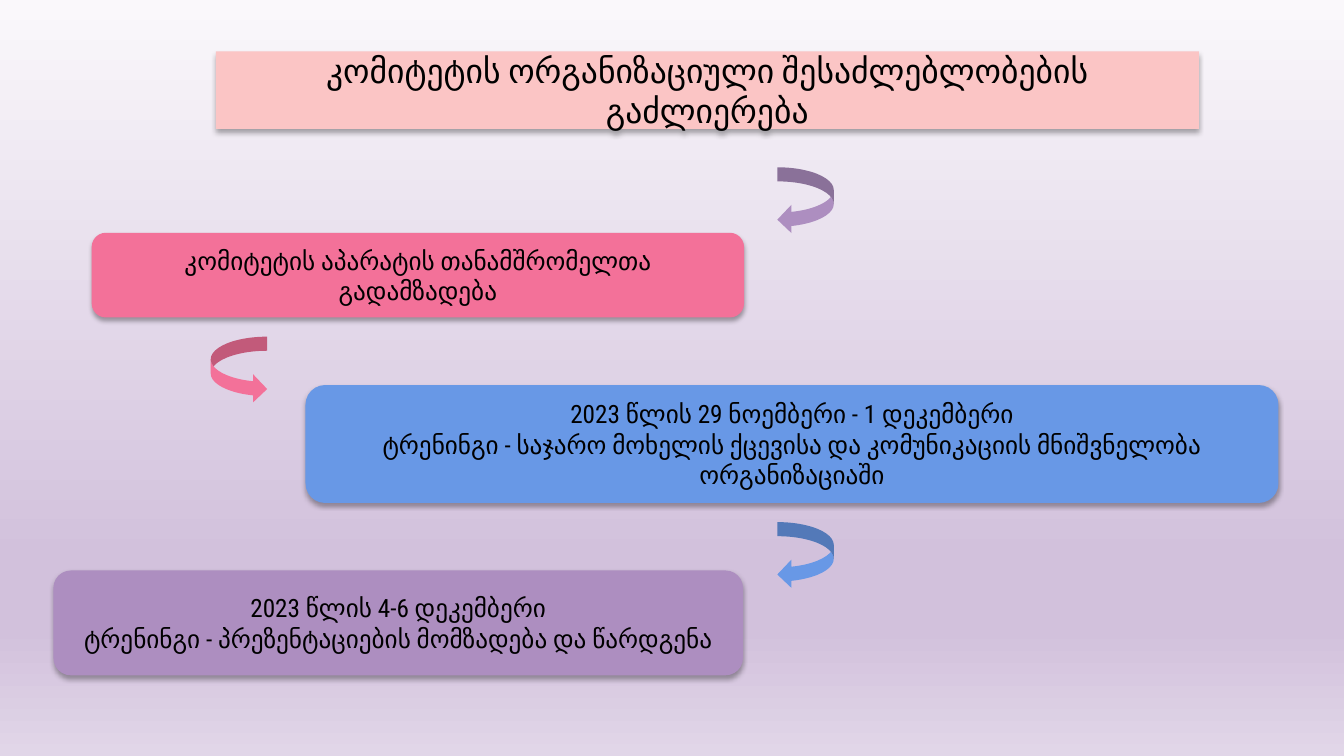
"""Build a slide of staggered training steps joined by curved arrows."""
from lxml import etree
from pptx import Presentation
from pptx.dml.color import RGBColor
from pptx.enum.shapes import MSO_SHAPE
from pptx.enum.text import MSO_ANCHOR, MSO_AUTO_SIZE, PP_ALIGN
from pptx.oxml import parse_xml
from pptx.oxml.ns import nsdecls, qn
from pptx.util import Inches, Pt

ROUND = MSO_SHAPE.ROUNDED_RECTANGLE
LEFT, RIGHT = MSO_SHAPE.CURVED_LEFT_ARROW, MSO_SHAPE.CURVED_RIGHT_ARROW
MIDDLE, CENTER = MSO_ANCHOR.MIDDLE, PP_ALIGN.CENTER
FIXED = MSO_AUTO_SIZE.NONE

COLORS = {"blush": "FBC5C5", "pink": "F37199", "blue": "6898E6",
          "purple": "AD8EC0", "black": "000000"}
STOPS = [(0, "FAF8FB"), (74, "D2C1DC"), (83, "D2C1DC"), (100, "E1D6E8")]
TITLE = ("კომიტეტის ორგანიზაციული შესაძლებლობების გაძლიერება",)
TITLE_BOX = (2.14, 0.51, 9.75, 0.77)
STEPS = [
    ((0.91, 2.31, 6.47, 0.84), "pink",
     ("კომიტეტის აპარატის თანამშრომელთა გადამზადება",)),
    ((3.03, 3.82, 9.65, 1.17), "blue",
     ("2023 წლის 29 ნოემბერი - 1 დეკემბერი",
      "ტრენინგი - საჯარო მოხელის ქცევისა და კომუნიკაციის მნიშვნელობა "
      "ორგანიზაციაში")),
    ((0.53, 5.66, 6.84, 1.04), "purple",
     ("2023 წლის 4-6 დეკემბერი",
      "ტრენინგი - პრეზენტაციების მომზადება და წარდგენა")),
]
ARROWS = [(LEFT, 7.71, 1.66, "purple"), (RIGHT, 2.09, 3.34, "pink"),
          (LEFT, 7.71, 5.18, "blue")]
ARROW_SIZE = (0.56, 0.66)
FRAME = {"word_wrap": True, "auto_size": FIXED, "vertical_anchor": MIDDLE}
FONT = {"name": "Roboto Condensed", "bold": False}


def paint(shape, color):
    shape.fill.solid()
    shape.fill.fore_color.rgb = RGBColor.from_string(COLORS[color])
    shape.line.fill.background()
    shape.shadow.inherit = False


def fill_box(shape, color, lines, size):
    paint(shape, color)
    effects = shape.element.spPr.find(qn("a:effectLst"))
    effects.append(parse_xml(
        f'<a:outerShdw {nsdecls("a")} blurRad="{Pt(3.5)}" dist="{Pt(2.2)}" '
        'dir="5400000" algn="ctr" rotWithShape="0"><a:srgbClr val="000000">'
        '<a:alpha val="32000"/></a:srgbClr></a:outerShdw>'))
    frame = shape.text_frame
    for key, value in FRAME.items():
        setattr(frame, key, value)
    frame.text = "\n".join(lines)
    for para in frame.paragraphs:
        para.alignment = CENTER
        for run in para.runs:
            for key, value in FONT.items():
                setattr(run.font, key, value)
            run.font.size = Pt(size)
            run.font.color.rgb = RGBColor.from_string(COLORS["black"])


def set_back(slide):
    fill = slide.background.fill
    fill.gradient()
    fill.gradient_angle = 270
    stops = next(slide.element.iter(qn("a:gsLst")))
    for stop in list(stops):
        stops.remove(stop)
    for place, color in STOPS:
        stop = etree.SubElement(stops, qn("a:gs"), pos=str(place * 1000))
        etree.SubElement(stop, qn("a:srgbClr"), val=color)


def set_title(slide):
    title = slide.shapes.title
    for key, value in zip(("left", "top", "width", "height"), TITLE_BOX):
        setattr(title, key, Inches(value))
    title.element.spPr.append(parse_xml(
        f'<a:prstGeom {nsdecls("a")} prst="roundRect"><a:avLst/></a:prstGeom>'))
    fill_box(title, "blush", TITLE, 24)


def main():
    deck = Presentation()
    deck.slide_width, deck.slide_height = Inches(13.33), Inches(7.5)
    slide = deck.slides.add_slide(deck.slide_layouts[5])
    set_back(slide)
    set_title(slide)
    for box, color, lines in STEPS:
        step = slide.shapes.add_shape(ROUND, *map(Inches, box))
        fill_box(step, color, lines, 18)
    for kind, left, top, color in ARROWS:
        box = map(Inches, (left, top, *ARROW_SIZE))
        paint(slide.shapes.add_shape(kind, *box), color)
    deck.save("out.pptx")


if __name__ == "__main__":
    main()
